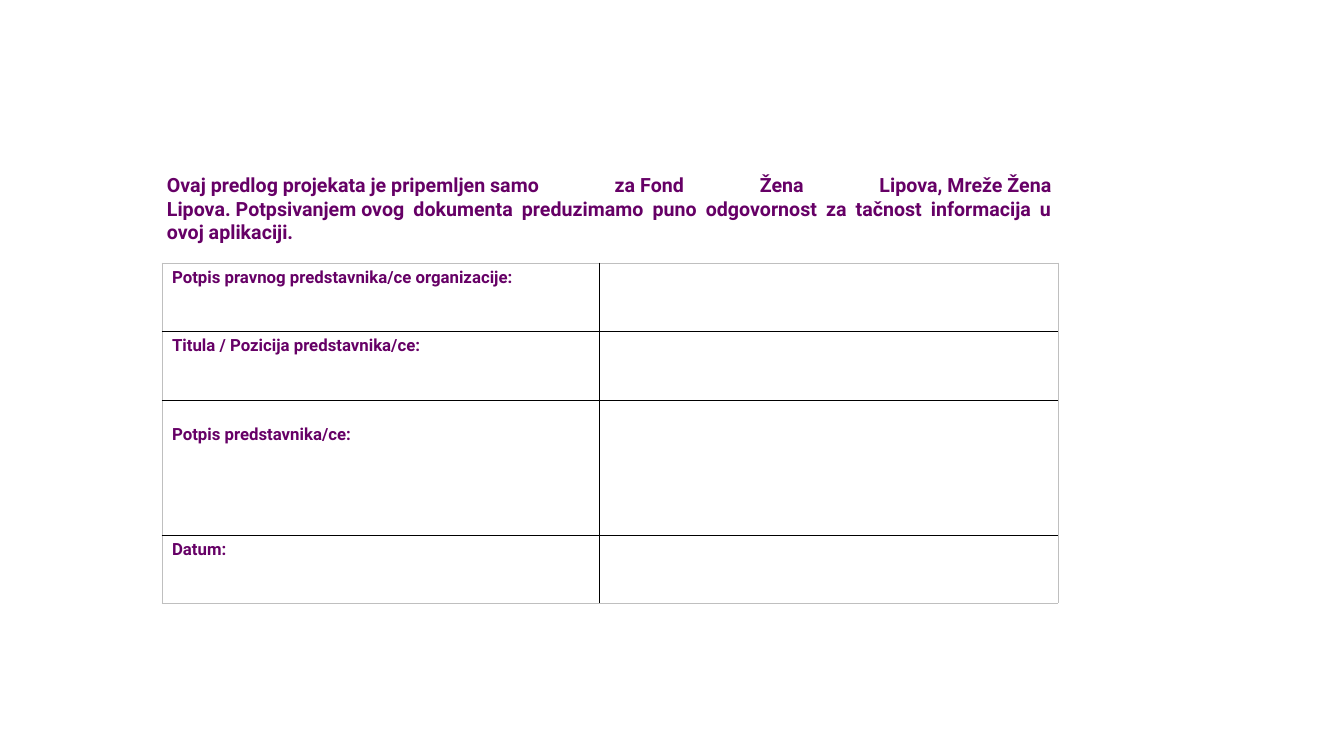
from dataclasses import dataclass

from lxml.etree import SubElement
from pptx import Presentation
from pptx.dml.color import RGBColor
from pptx.enum.text import PP_ALIGN as Align
from pptx.oxml.ns import qn
from pptx.slide import Slide
from pptx.table import _Cell as Cell
from pptx.text.text import TextFrame as Frame
from pptx.util import Emu, Pt

PLUM = RGBColor(0x66, 0x00, 0x66)
BLACK = RGBColor(0x00, 0x00, 0x00)
GREY = RGBColor(0xBF, 0xBF, 0xBF)
FONT = "Roboto"
SCALE = 914400 / 100.8
COLS = (437, 459)
PAD = 5


@dataclass
class Field:
    label: str
    high: int
    drop: int = 0


FIELDS = (
    Field("Potpis pravnog predstavnika/ce organizacije:", 68),
    Field("Titula / Pozicija predstavnika/ce:", 69),
    Field("Potpis predstavnika/ce:", 135, drop=20),
    Field("Datum:", 68),
)


def px(size: int) -> Emu:
    return Emu(round(size * SCALE))


def glue(words: str) -> str:
    """Join words with no-break spaces, so that they stay on one line."""
    return words.replace(" ", chr(160))


PLEDGE = " ".join((
    glue("Ovaj predlog projekata je pripemljen samo"),
    glue("za Fond"),
    "Žena",
    glue("Lipova, Mreže Žena"),
    glue("Lipova. Potpsivanjem ovog"),
    "dokumenta preduzimamo puno odgovornost za tačnost informacija u ovoj aplikaciji.",
))


def write(frame: Frame, text: str, *, size: int, align: Align = Align.LEFT) -> None:
    frame.word_wrap = True
    para = frame.paragraphs[0]
    para.alignment = align
    run = para.add_run()
    run.text = text
    font = run.font
    font.name, font.size, font.bold = FONT, Pt(size), True
    font.color.rgb = PLUM


def edge(cell: Cell, row: int, col: int) -> None:
    """Draw thin lines round the cell: grey on the rim of the table, black inside."""
    rim = {
        "lnL": col == 0,
        "lnR": col == len(COLS) - 1,
        "lnT": row == 0,
        "lnB": row == len(FIELDS) - 1,
    }
    props = cell._tc.get_or_add_tcPr()
    for side, outer in rim.items():
        line = SubElement(props, qn(f"a:{side}"), w=str(Pt(0.5)))
        fill = SubElement(line, qn("a:solidFill"))
        SubElement(fill, qn("a:srgbClr"), val=str(GREY if outer else BLACK))
    cell.fill.background()


def add_pledge(slide: Slide) -> None:
    box = slide.shapes.add_textbox(px(157), px(168), px(905), px(82))
    write(box.text_frame, PLEDGE, size=14, align=Align.JUSTIFY)


def add_form(slide: Slide) -> None:
    high = sum(field.high for field in FIELDS)
    form = slide.shapes.add_table(
        len(FIELDS), len(COLS), px(162), px(263), px(sum(COLS)), px(high)
    ).table
    form.first_row = form.horz_banding = False
    for col, wide in zip(form.columns, COLS):
        col.width = px(wide)
    for i, (row, field) in enumerate(zip(form.rows, FIELDS)):
        row.height = px(field.high)
        for j, cell in enumerate(row.cells):
            edge(cell, i, j)
        label = row.cells[0]
        label.margin_top = px(PAD + field.drop)
        write(label.text_frame, field.label, size=12)


def main() -> None:
    deck = Presentation()
    deck.slide_width, deck.slide_height = px(1344), px(756)
    slide = deck.slides.add_slide(deck.slide_layouts[6])
    add_pledge(slide)
    add_form(slide)
    deck.save("out.pptx")


if __name__ == "__main__":
    main()
